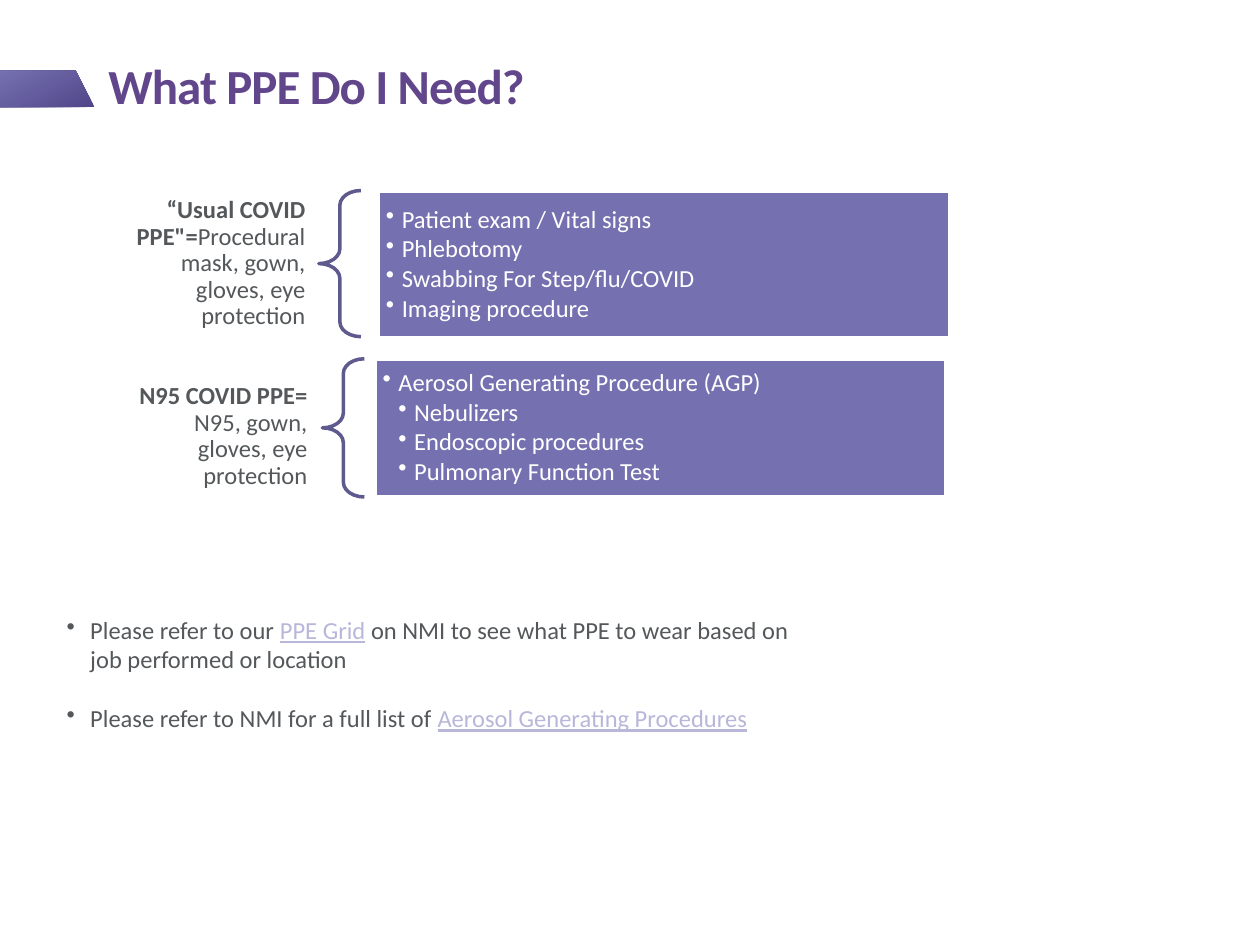
from dataclasses import dataclass

from lxml.etree import SubElement
from pptx import Presentation
from pptx.dml.color import RGBColor
from pptx.enum.shapes import MSO_SHAPE
from pptx.enum.text import MSO_ANCHOR, PP_ALIGN
from pptx.oxml.ns import qn
from pptx.util import Pt


@dataclass(frozen=True)
class Theme:
    font: str = "Calibri"
    title_size: float = 28
    body_size: float = 14
    title: RGBColor = RGBColor(0x61, 0x46, 0x8B)
    text: RGBColor = RGBColor(0x54, 0x58, 0x5A)
    link: RGBColor = RGBColor(0xB8, 0xB7, 0xDA)
    panel: RGBColor = RGBColor(0x75, 0x71, 0xB0)
    brace: RGBColor = RGBColor(0x5E, 0x5A, 0x8D)
    dark: RGBColor = RGBColor(0x51, 0x46, 0x89)
    white: RGBColor = RGBColor(0xFF, 0xFF, 0xFF)


THEME = Theme()

USUAL_LABEL = ("“Usual COVID PPE\"=", "Procedural mask, gown, gloves, eye protection")
USUAL_TASKS = [
    (0, "Patient exam / Vital signs"),
    (0, "Phlebotomy"),
    (0, "Swabbing For Step/flu/COVID"),
    (0, "Imaging procedure"),
]
N95_LABEL = ("N95 COVID PPE= ", "N95, gown, gloves, eye protection")
N95_TASKS = [
    (0, "Aerosol Generating Procedure (AGP)"),
    (1, "Nebulizers"),
    (1, "Endoscopic procedures"),
    (1, "Pulmonary Function Test"),
]
NOTES = [
    [
        ("Please refer to our ", False),
        ("PPE Grid", True),
        (" on NMI to see what PPE to wear based on job performed or location", False),
    ],
    [
        ("Please refer to NMI for a full list of ", False),
        ("Aerosol Generating Procedures", True),
    ],
]


def add_span(para, text, color, size=THEME.body_size, bold=False, underline=False):
    span = para.add_run()
    span.text = text
    span.font.name = THEME.font
    span.font.size = Pt(size)
    span.font.color.rgb = color
    span.font.bold = bold
    span.font.underline = underline
    return span


def set_bullet(para, margin, hanging):
    properties = para._p.get_or_add_pPr()
    properties.set("marL", str(Pt(margin)))
    properties.set("indent", str(Pt(-hanging)))
    SubElement(properties, qn("a:buChar")).set("char", "•")


def set_frame(frame, anchor, insets):
    frame.word_wrap = True
    frame.vertical_anchor = anchor
    frame.margin_left, frame.margin_top, frame.margin_right, frame.margin_bottom = map(Pt, insets)


def add_text_box(page, left, top, width, height, anchor, insets):
    box = page.shapes.add_textbox(Pt(left), Pt(top), Pt(width), Pt(height))
    set_frame(box.text_frame, anchor, insets)
    return box.text_frame


def paragraphs(frame, items):
    for index, item in enumerate(items):
        yield (frame.add_paragraph() if index else frame.paragraphs[0]), item


def add_title_flag(page):
    builder = page.shapes.build_freeform(0, Pt(40.3))
    builder.add_line_segments([(Pt(43.2), Pt(40.3)), (Pt(54), Pt(61.2)), (0, Pt(61.2))])
    flag = builder.convert_to_shape()
    flag.shadow.inherit = False
    flag.line.fill.background()
    flag.fill.gradient()
    flag.fill.gradient_angle = 118
    for stop, color in zip(flag.fill.gradient_stops, (THEME.dark, THEME.panel)):
        stop.color.rgb = color


def add_title(page, text):
    frame = add_text_box(page, 62, 9.4, 565, 59.8, MSO_ANCHOR.BOTTOM, (0, 0, 7.2, 3.6))
    para = frame.paragraphs[0]
    para.line_spacing = 0.85
    span = add_span(para, text, THEME.title, THEME.title_size, bold=True)
    span.font._element.set("spc", "-50")


def add_label(page, left, top, height, label):
    frame = add_text_box(page, left, top, 120.2, height, MSO_ANCHOR.MIDDLE, (8, 2.9, 8, 2.9))
    para = frame.paragraphs[0]
    para.alignment = PP_ALIGN.RIGHT
    para.line_spacing = 0.9
    name, items = label
    add_span(para, name, THEME.text, bold=True)
    add_span(para, items, THEME.text)


def add_brace(page, left, top, height):
    brace = page.shapes.add_shape(MSO_SHAPE.LEFT_BRACE, Pt(left), Pt(top), Pt(24), Pt(height))
    brace.shadow.inherit = False
    brace.adjustments[0] = 0.35
    brace.fill.background()
    brace.line.color.rgb = THEME.brace
    brace.line.width = Pt(2)


def add_panel(page, left, top, height, tasks):
    panel = page.shapes.add_shape(MSO_SHAPE.RECTANGLE, Pt(left), Pt(top), Pt(326.2), Pt(height))
    panel.shadow.inherit = False
    panel.fill.solid()
    panel.fill.fore_color.rgb = THEME.panel
    panel.line.color.rgb = THEME.white
    panel.line.width = Pt(2)
    set_frame(panel.text_frame, MSO_ANCHOR.MIDDLE, (4.2,) * 4)
    for para, (level, text) in paragraphs(panel.text_frame, tasks):
        para.alignment = PP_ALIGN.LEFT
        para.level = level + 1
        para.line_spacing = 0.9
        para.space_after = Pt(1.8)
        set_bullet(para, 9 * (level + 1), 9)
        add_span(para, text, THEME.white)


def add_notes(page, notes):
    frame = add_text_box(page, 31, 347.8, 429, 75, MSO_ANCHOR.TOP, (7.2, 3.6, 7.2, 3.6))
    for para, spans in paragraphs(frame, notes):
        if spans is not notes[0]:
            para.space_before = Pt(17)
        set_bullet(para, 13.5, 13.5)
        for text, linked in spans:
            add_span(para, text, THEME.link if linked else THEME.text, underline=linked)


def main():
    deck = Presentation()
    deck.slide_width, deck.slide_height = Pt(720), Pt(540)
    page = deck.slides.add_slide(deck.slide_layouts[6])
    add_title_flag(page)
    add_title(page, "What PPE Do I Need?")
    add_label(page, 62.4, 108.9, 83.5, USUAL_LABEL)
    add_brace(page, 182.2, 108.9, 83.5)
    add_panel(page, 216.4, 109.5, 83.5, USUAL_TASKS)
    add_label(page, 63.5, 215.3, 68.4, N95_LABEL)
    add_brace(page, 184.2, 205, 79)
    add_panel(page, 214.5, 205, 79, N95_TASKS)
    add_notes(page, NOTES)
    deck.save("out.pptx")


if __name__ == "__main__":
    main()
